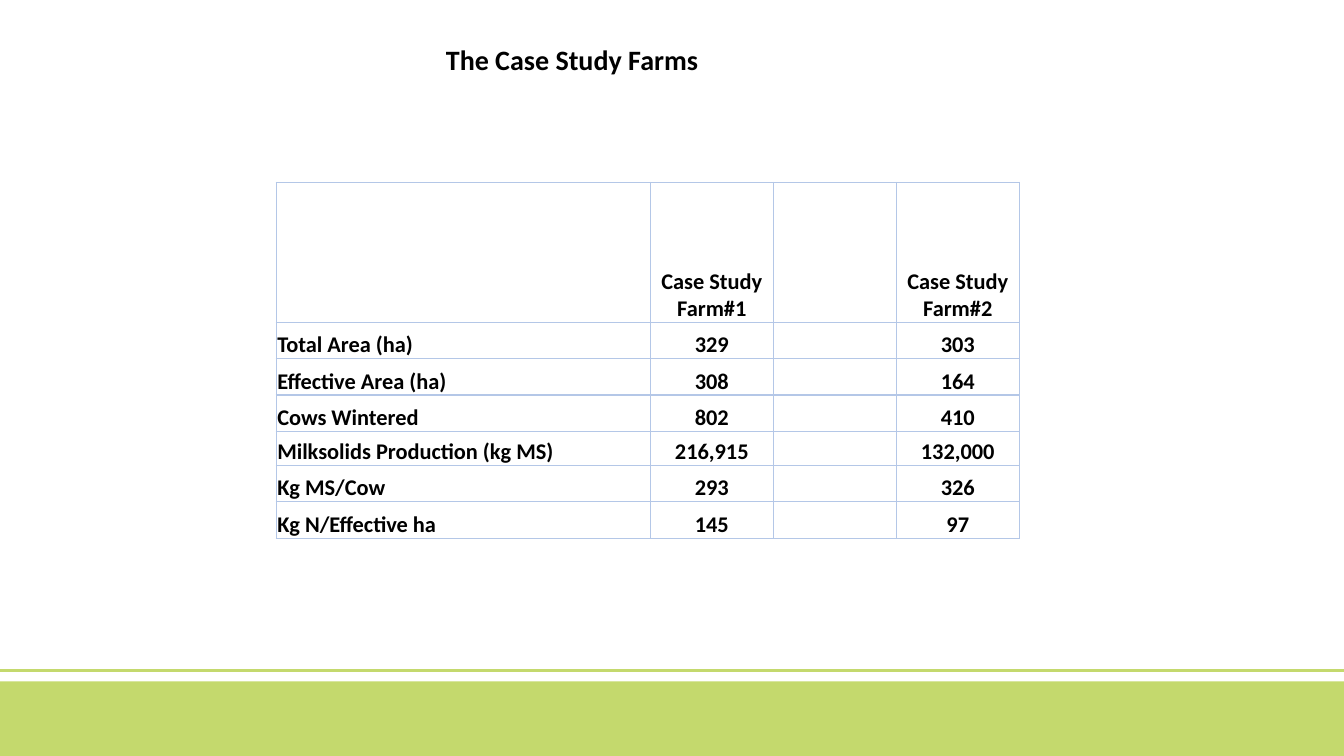
import pptx
import pptx.dml.color
import pptx.enum.shapes
import pptx.enum.text
import pptx.oxml
import pptx.oxml.ns
import pptx.util
from pptx.util import Inches

GREEN = "C4D96D"
BORDER = "B4C7E7"
BLACK = "000000"
ALIGN = pptx.enum.text.PP_ALIGN


def color(value):
    return pptx.dml.color.RGBColor.from_string(value)


def style(paragraph, size, alignment):
    paragraph.alignment = alignment
    paragraph.font.name = "Calibri"
    paragraph.font.size = pptx.util.Pt(size)
    paragraph.font.bold = True
    paragraph.font.color.rgb = color(BLACK)


presentation = pptx.Presentation()
presentation.slide_width = Inches(13.33)
presentation.slide_height = Inches(7.5)
slide = presentation.slides.add_slide(presentation.slide_layouts[6])

footer = slide.shapes.add_shape(
    pptx.enum.shapes.MSO_SHAPE.RECTANGLE,
    Inches(0), Inches(6.76), Inches(13.33), Inches(0.74))
footer.shadow.inherit = False
footer.fill.solid()
footer.fill.fore_color.rgb = color(GREEN)
footer.line.fill.background()

footer_rule = slide.shapes.add_connector(
    pptx.enum.shapes.MSO_CONNECTOR.STRAIGHT,
    Inches(0), Inches(6.65), Inches(13.33), Inches(6.65))
footer_rule.line.color.rgb = color(GREEN)
footer_rule.line.width = pptx.util.Pt(2.25)
pptx.oxml.ns.qn("a:effectLst")
footer_rule.element.spPr.append(pptx.oxml.parse_xml(
    f'<a:effectLst {pptx.oxml.ns.nsdecls("a")}/>'))

title = slide.shapes.add_textbox(
    Inches(2.26), Inches(0.37), Inches(6.83), Inches(0.44))
title.text_frame.word_wrap = True
title.text_frame.auto_size = pptx.enum.text.MSO_AUTO_SIZE.SHAPE_TO_FIT_TEXT
title.text_frame.text = "The Case Study Farms"
style(title.text_frame.paragraphs[0], 20, ALIGN.CENTER)

farm_rows = [
    ("", "Case Study Farm#1", "", "Case Study Farm#2"),
    ("Total Area (ha)", "329", "", "303"),
    ("Effective Area (ha)", "308", "", "164"),
    ("Cows Wintered", "802", "", "410"),
    ("Milksolids Production (kg MS)", "216,915", "", "132,000"),
    ("Kg MS/Cow", "293", "", "326"),
    ("Kg N/Effective ha", "145", "", "97"),
]
column_widths = [3.71, 1.22, 1.22, 1.22]
row_heights = [1.39, 0.36, 0.36, 0.36, 0.34, 0.36, 0.36]

table = slide.shapes.add_table(
    len(row_heights), len(column_widths), Inches(2.74), Inches(1.81),
    Inches(sum(column_widths)), Inches(sum(row_heights))).table
table.first_row = False
table.horz_banding = False
for column, width in zip(table.columns, column_widths):
    column.width = Inches(width)
for row, height, values in zip(table.rows, row_heights, farm_rows):
    row.height = Inches(height)
    for column_index, (cell, value) in enumerate(zip(row.cells, values)):
        cell.margin_left = cell.margin_right = cell.margin_top = Inches(0.01)
        cell.margin_bottom = Inches(0)
        cell.vertical_anchor = pptx.enum.text.MSO_ANCHOR.BOTTOM
        cell.text = value
        style(cell.text_frame.paragraphs[0], 16,
              ALIGN.CENTER if column_index else ALIGN.LEFT)
        cell_properties = cell._tc.get_or_add_tcPr()
        for side in ("lnL", "lnR", "lnT", "lnB"):
            cell_properties.append(pptx.oxml.parse_xml(
                f'<a:{side} {pptx.oxml.ns.nsdecls("a")} w="12700"><a:solidFill>'
                f'<a:srgbClr val="{BORDER}"/></a:solidFill></a:{side}>'))
        cell.fill.background()

presentation.save("out.pptx")
